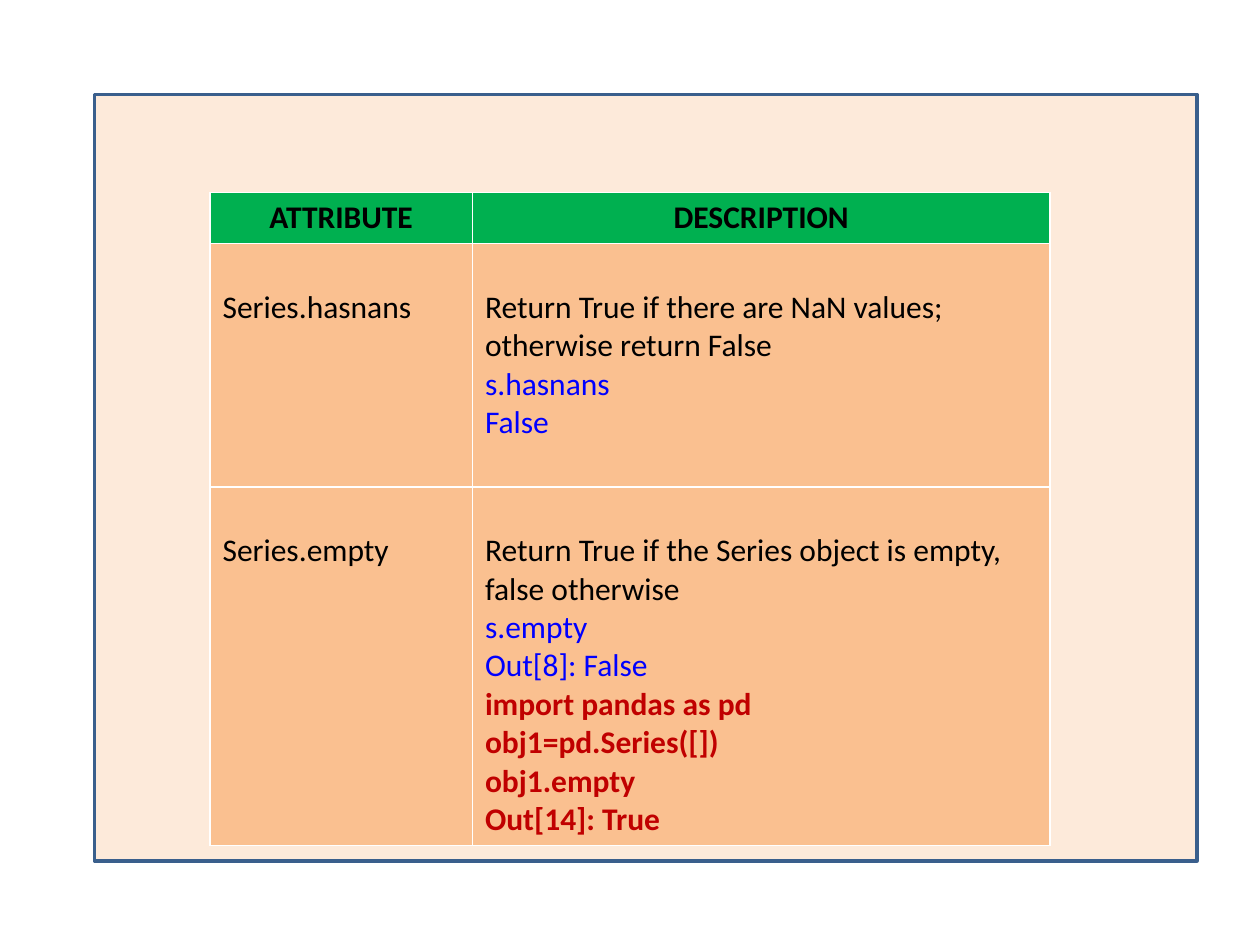
from pptx import Presentation
from pptx.dml.color import RGBColor
from pptx.enum.shapes import MSO_SHAPE
from pptx.enum.text import PP_ALIGN
from pptx.util import Pt

# Content: each cell is a list of (text, style) paragraphs
ROWS = [
    [[("ATTRIBUTE", "head")], [("DESCRIPTION", "head")]],
    [
        [("Series.hasnans", "body")],
        [
            ("Return True if there are NaN values; otherwise return False", "body"),
            ("s.hasnans", "code"),
            ("False", "code"),
        ],
    ],
    [
        [("Series.empty", "body")],
        [
            ("Return True if the Series object is empty, false otherwise", "body"),
            ("s.empty", "code"),
            ("Out[8]: False", "code"),
            ("import pandas as pd", "demo"),
            ("obj1=pd.Series([])", "demo"),
            ("obj1.empty", "demo"),
            ("Out[14]: True", "demo"),
        ],
    ],
]

THEME = {
    "font": "Calibri", "size": 18,
    "panel": "FDEADA", "edge": "3A5F8C",
    "top": "00B050", "cell": "FAC090",
    # text style: colour, bold, alignment
    "head": ("000000", True, PP_ALIGN.CENTER),
    "body": ("000000", False, PP_ALIGN.LEFT),
    "code": ("0000FF", False, PP_ALIGN.LEFT),
    "demo": ("C00000", True, PP_ALIGN.LEFT),
}
PANEL = (54, 54, 630, 438)
LEFT, TOP = 120, 110
WIDTHS = (150, 330)
HEIGHTS = (29.2, 139, 205)
PAD, LINE = 3.6, 22  # cell margin and one line of text


def paint(fill, name):
    fill.solid()
    fill.fore_color.rgb = RGBColor.from_string(THEME[name])


def write(cell, paras):
    frame = cell.text_frame
    for i, (text, style) in enumerate(paras):
        para = frame.paragraphs[0] if i == 0 else frame.add_paragraph()
        run = para.add_run()
        run.text = text
        color, bold, para.alignment = THEME[style]
        look = {"name": THEME["font"], "size": Pt(THEME["size"]), "bold": bold}
        for key, value in look.items():
            setattr(run.font, key, value)
        run.font.color.rgb = RGBColor.from_string(color)


def main():
    deck = Presentation()
    deck.slide_width, deck.slide_height = Pt(720), Pt(540)
    slide = deck.slides.add_slide(deck.slide_layouts[6])

    # Background panel
    panel = slide.shapes.add_shape(MSO_SHAPE.RECTANGLE, *map(Pt, PANEL))
    panel.shadow.inherit = False
    paint(panel.fill, "panel")
    paint(panel.line.fill, "edge")
    panel.line.width = Pt(2)

    # Attribute table; its default style draws the white rules
    box = map(Pt, (LEFT, TOP, sum(WIDTHS), sum(HEIGHTS)))
    table = slide.shapes.add_table(len(ROWS), len(WIDTHS), *box).table
    table.horz_banding = False
    for col, width in zip(table.columns, WIDTHS):
        col.width = Pt(width)
    for r, row in enumerate(ROWS):
        table.rows[r].height = Pt(HEIGHTS[r])
        for c, paras in enumerate(row):
            cell = table.cell(r, c)
            paint(cell.fill, "cell" if r else "top")
            cell.margin_top = Pt(PAD + LINE if r else PAD)
            write(cell, paras)

    deck.save("out.pptx")


if __name__ == "__main__":
    main()
